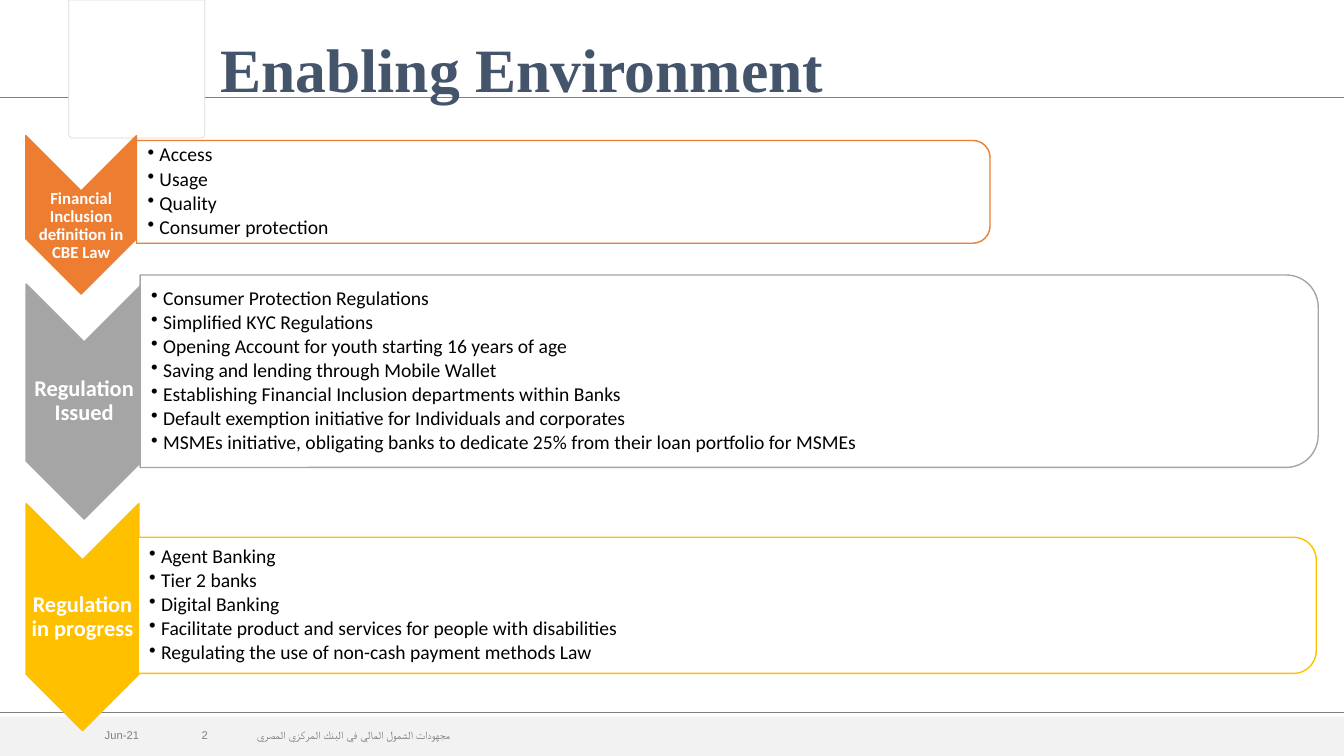
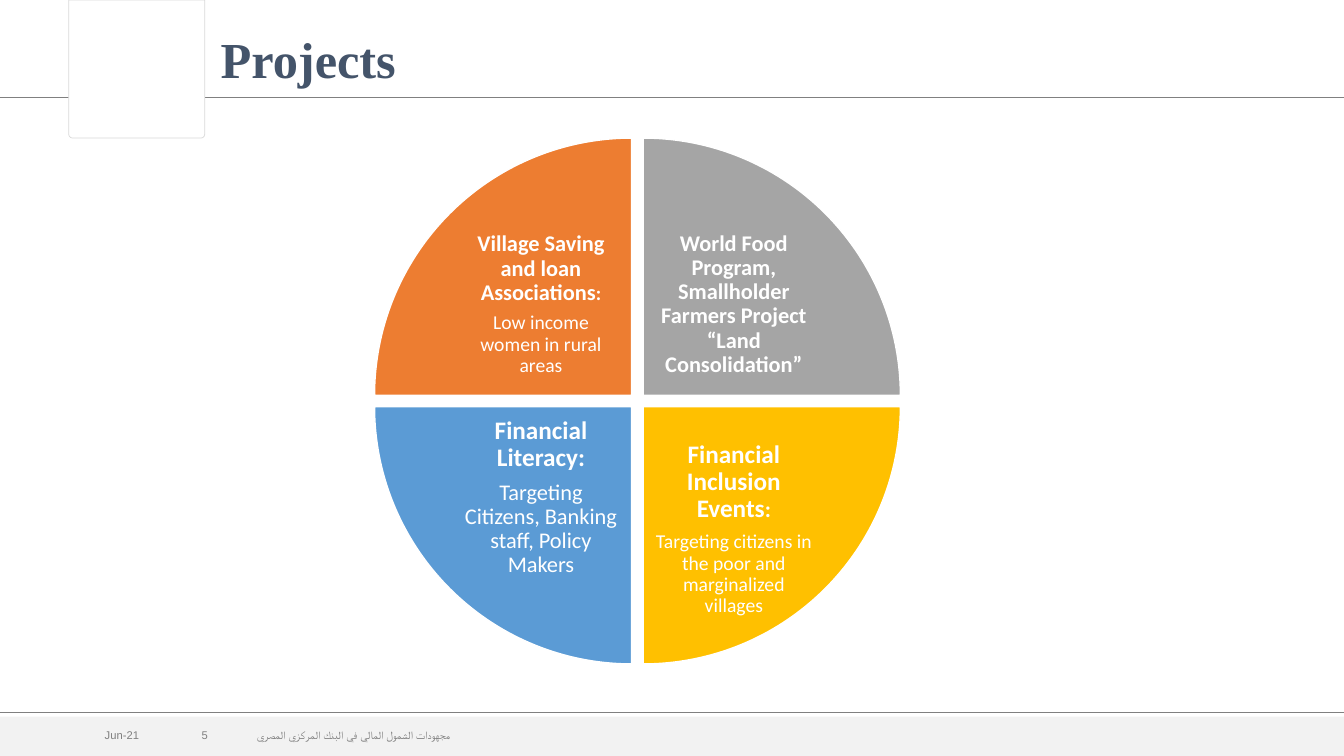
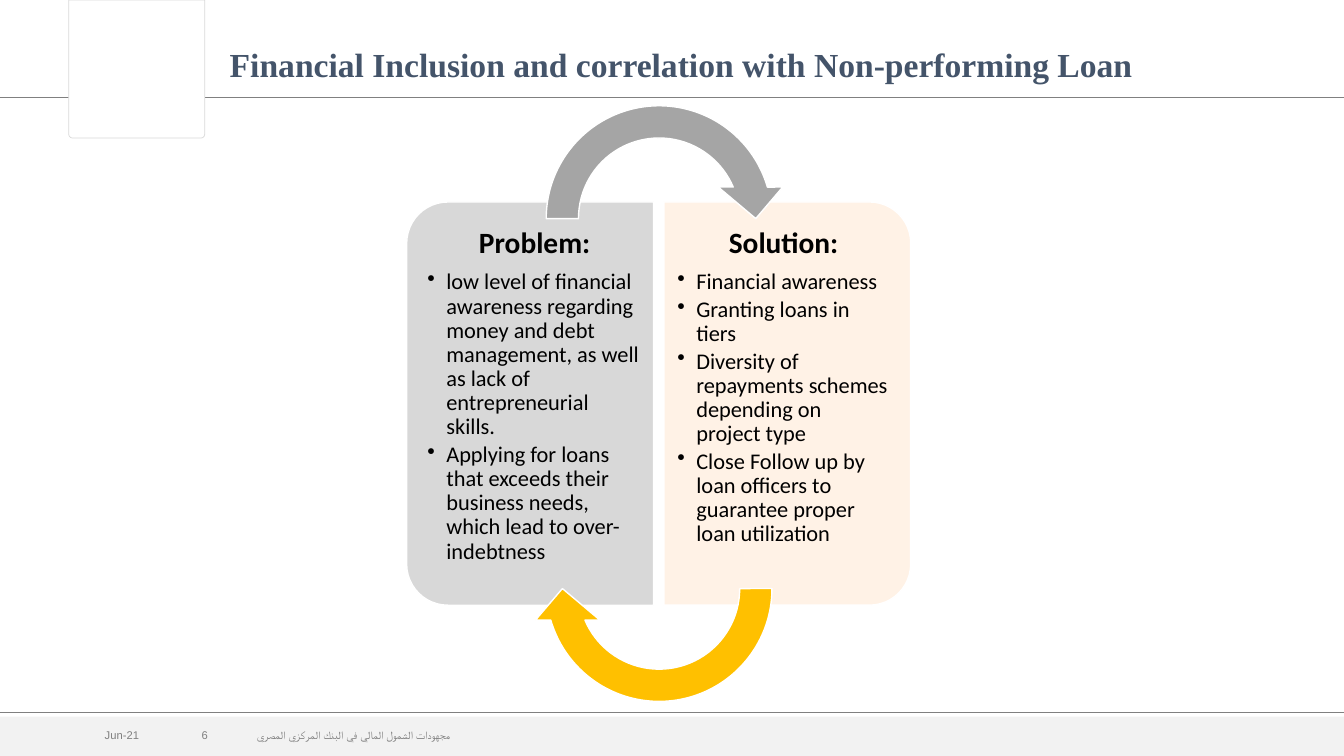
from dataclasses import dataclass

from lxml.etree import SubElement
from pptx import Presentation
from pptx.dml.color import RGBColor
from pptx.enum.shapes import MSO_CONNECTOR, MSO_SHAPE
from pptx.enum.text import MSO_ANCHOR, PP_ALIGN
from pptx.oxml.ns import qn
from pptx.util import Cm, Pt

COLORS = {
    "white": "FFFFFF",
    "black": "000000",
    "title": "44546A",
    "band": "F2F2F2",
    "rule": "808080",
    "frame": "D9D9D9",
    "orange": "ED7D31",
    "gray": "A5A5A5",
    "yellow": "FFC000",
    "blue": "5B9BD5",
    "problem": "D8D8D8",
    "solution": "FFF2E6",
}
SLIDE_WIDTH, SLIDE_HEIGHT = 33.87, 19.05
FOOTER_TEXT = "مجهودات الشمول المالي في البنك المركزي المصري"


@dataclass
class Line:
    """One paragraph; the tail is a run two points smaller."""
    text: str
    size: int
    bold: bool = False
    bullet: bool = False
    tail: str = ""


class DeckBuilder:
    """Holds the deck style and the current page; lengths are centimetres."""

    def __init__(self):
        self.deck = Presentation()
        self.deck.slide_width = Cm(SLIDE_WIDTH)
        self.deck.slide_height = Cm(SLIDE_HEIGHT)
        self.page = None

    def color(self, name):
        return RGBColor.from_string(COLORS[name])

    def add_page(self, number, title, size, left, top):
        self.page = self.deck.slides.add_slide(self.deck.slide_layouts[6])
        self.shape(MSO_SHAPE.RECTANGLE, (0, 18.06, SLIDE_WIDTH, 0.99), "band")
        for rule_top in (17.96, 2.46):
            self.rule(rule_top)
        frame = self.shape(MSO_SHAPE.ROUND_2_SAME_RECTANGLE,
                           (1.73, 0, 3.43, 3.48), "white", "frame", 180, 0.5)
        frame.adjustments[0] = 0.03
        for text, footer_left, width, font in (("Jun-21", 2.39, 2.03, "Arial"),
                                               (FOOTER_TEXT, 6.22, 9.63, "Lato"),
                                               (str(number), 4.83, 0.94, "Arial")):
            self.text((footer_left, 18.34, width, 0.38), [Line(text, 8)], "rule", font)
        self.text((left, top, 26, 2.1), [Line(title, size, True)], "title",
                  "Times New Roman", anchor=MSO_ANCHOR.TOP)

    def rule(self, top):
        line = self.page.shapes.add_connector(
            MSO_CONNECTOR.STRAIGHT, Cm(0), Cm(top), Cm(SLIDE_WIDTH), Cm(top))
        line.line.color.rgb = self.color("rule")
        line.line.width = Pt(0.5)
        SubElement(line._element.spPr, qn("a:effectLst"))

    def shape(self, kind, bounds, fill, outline=None, rotation=0, weight=1):
        """Bounds are those seen on the page, after the rotation."""
        left, top, width, height = bounds
        if rotation in (90, 270):
            left += (width - height) / 2
            top += (height - width) / 2
            width, height = height, width
        box = self.page.shapes.add_shape(kind, Cm(left), Cm(top), Cm(width), Cm(height))
        box.rotation = rotation
        box.shadow.inherit = False
        box.fill.solid()
        box.fill.fore_color.rgb = self.color(fill)
        if outline:
            box.line.color.rgb = self.color(outline)
            box.line.width = Pt(weight)
        else:
            box.line.fill.background()
        return box

    def text(self, bounds, lines, color, font="Calibri", insets=(0.25, 0.13, 0.25, 0.13),
             anchor=MSO_ANCHOR.MIDDLE, align=PP_ALIGN.LEFT, tight=False, hanging=0.3):
        box = self.page.shapes.add_textbox(*(Cm(length) for length in bounds))
        frame = box.text_frame
        frame.word_wrap = True
        frame.vertical_anchor = anchor
        (frame.margin_left, frame.margin_top,
         frame.margin_right, frame.margin_bottom) = (Cm(inset) for inset in insets)
        frame.text = "\n".join(line.text for line in lines)
        for para, line in zip(frame.paragraphs, lines):
            if line.bullet:
                self.bullet(para, hanging)
            para.alignment = PP_ALIGN.LEFT if line.bullet else align
            if tight:
                para.line_spacing = 0.9
                para.space_after = Pt(round(line.size * (0.15 if line.bullet else 0.35), 1))
            if line.tail:
                para.add_run().text = line.tail
            for index, span in enumerate(para.runs):
                span.font.name = font
                span.font.size = Pt(line.size - 2 * index)
                span.font.bold = line.bold
                span.font.color.rgb = self.color(color)

    def bullet(self, para, hanging):
        properties = para._p.get_or_add_pPr()
        properties.set("marL", str(Cm(hanging)))
        properties.set("indent", str(-Cm(hanging)))
        SubElement(properties, qn("a:buChar")).set("char", "•")

    def label(self, bounds, lines, inset):
        self.text(bounds, lines, "white", insets=(inset,) * 4,
                  align=PP_ALIGN.CENTER, tight=True)


def build_environment(builder):
    builder.add_page(2, "Enabling Environment", 44, 5.31, 0.64)
    # color, label, label size, label drop, chevron bounds, panel bounds, items
    rows = (
        ("orange", "Financial Inclusion definition in CBE Law", 12, 0.28,
         (0.65, 3.42, 2.79, 3.99), (3.44, 3.54, 21.51, 2.59),
         ("Access", "Usage", "Quality", "Consumer protection")),
        ("gray", "Regulation Issued", 16, 0,
         (0.66, 7.16, 2.92, 5.92), (3.53, 6.93, 29.69, 4.85),
         ("Consumer Protection Regulations",
          "Simplified KYC Regulations",
          "Opening Account for youth starting 16 years of age",
          "Saving and lending through Mobile Wallet",
          "Establishing Financial Inclusion departments within Banks",
          "Default exemption initiative for Individuals and corporates",
          "MSMEs initiative, obligating banks to dedicate 25% from their loan "
          "portfolio for MSMEs")),
        ("yellow", "Regulation in progress", 16, 0,
         (0.66, 12.69, 2.84, 5.72), (3.48, 13.54, 29.69, 3.43),
         ("Agent Banking", "Tier 2 banks", "Digital Banking",
          "Facilitate product and services for people with disabilities",
          "Regulating the use of non-cash payment methods Law")),
    )
    for color, label, size, drop, chevron, panel, items in rows:
        builder.shape(MSO_SHAPE.CHEVRON, chevron, color, color, 90)
        left, top, width, height = chevron
        builder.label((left, top + drop, width, height), [Line(label, size, True)], 0.03)
        builder.shape(MSO_SHAPE.ROUND_2_SAME_RECTANGLE, panel, "white", color, 90)
        builder.text(panel, [Line(item, 14, bullet=True) for item in items], "black",
                     insets=(0.28, 0.03, 0.03, 0.03), tight=True)


def build_projects(builder):
    builder.add_page(5, "Projects", 36, 5.31, 0.58)
    wedge, pitch, label = 6.48, 6.77, 4.57
    # column, row, rotation, color, label drop, lines
    wedges = (
        (0, 0, 0, "orange", 0,
         [Line("Village Saving and loan Associations", 16, True, tail=":"),
          Line("Low income women in rural areas", 14)]),
        (1, 0, 90, "gray", 0,
         [Line("World Food Program, Smallholder Farmers Project “Land Consolidation”",
               16, True)]),
        (1, 1, 180, "yellow", 0.8,
         [Line("Financial Inclusion Events", 18, True, tail=":"),
          Line("Targeting citizens in the poor and marginalized villages", 14)]),
        (0, 1, 270, "blue", 0,
         [Line("Financial Literacy:", 18, True),
          Line("Targeting Citizens, Banking staff, Policy Makers", 16)]),
    )
    for column, row, rotation, color, drop, lines in wedges:
        left, top = 9.44 + column * pitch, 3.48 + row * pitch
        builder.shape(MSO_SHAPE.PIE_WEDGE, (left, top, wedge, wedge), color, "white", rotation)
        label_left = left + (1 - column) * (wedge - label)
        label_top = top + (1 - row) * (wedge - label) + drop
        builder.label((label_left, label_top, label, label), lines, 0.3)


def build_correlation(builder):
    builder.add_page(6, "Financial Inclusion and correlation with Non-performing Loan",
                     24, 5.54, 0.97)
    # heading, color, rotation, panel left, text left, left and right inset, items
    panels = (
        ("Problem:", "problem", 270, 10.25, 10.54, 0.23, 0.28,
         ("low level of financial awareness regarding money and debt management, "
          "as well as lack of entrepreneurial skills.",
          "Applying for loans that exceeds their business needs, which lead to "
          "over-indebtness")),
        ("Solution:", "solution", 90, 16.73, 16.74, 0.33, 0.23,
         ("Financial awareness", "Granting loans in tiers",
          "Diversity of repayments schemes depending on project type",
          "Close Follow up by loan officers to guarantee proper loan utilization")),
    )
    for heading, color, rotation, left, text_left, inset_left, inset_right, items in panels:
        builder.shape(MSO_SHAPE.ROUND_2_SAME_RECTANGLE, (left, 5.09, 6.22, 10.16),
                      color, "white", rotation)
        lines = [Line(heading, 21, True)] + [Line(item, 16, bullet=True) for item in items]
        builder.text((text_left, 5.38, 5.92, 9.58), lines, "black",
                     insets=(inset_left, 0.38, inset_right, 0.38), anchor=MSO_ANCHOR.TOP,
                     align=PP_ALIGN.CENTER, tight=True, hanging=0.48)
    for top, color, rotation in ((2.26, "gray", 0), (11.58, "yellow", 180)):
        builder.shape(MSO_SHAPE.CIRCULAR_ARROW, (13.36, top, 6.5, 6.5),
                      color, "white", rotation)


def main():
    builder = DeckBuilder()
    build_environment(builder)
    build_projects(builder)
    build_correlation(builder)
    builder.deck.save("out.pptx")


if __name__ == "__main__":
    main()
